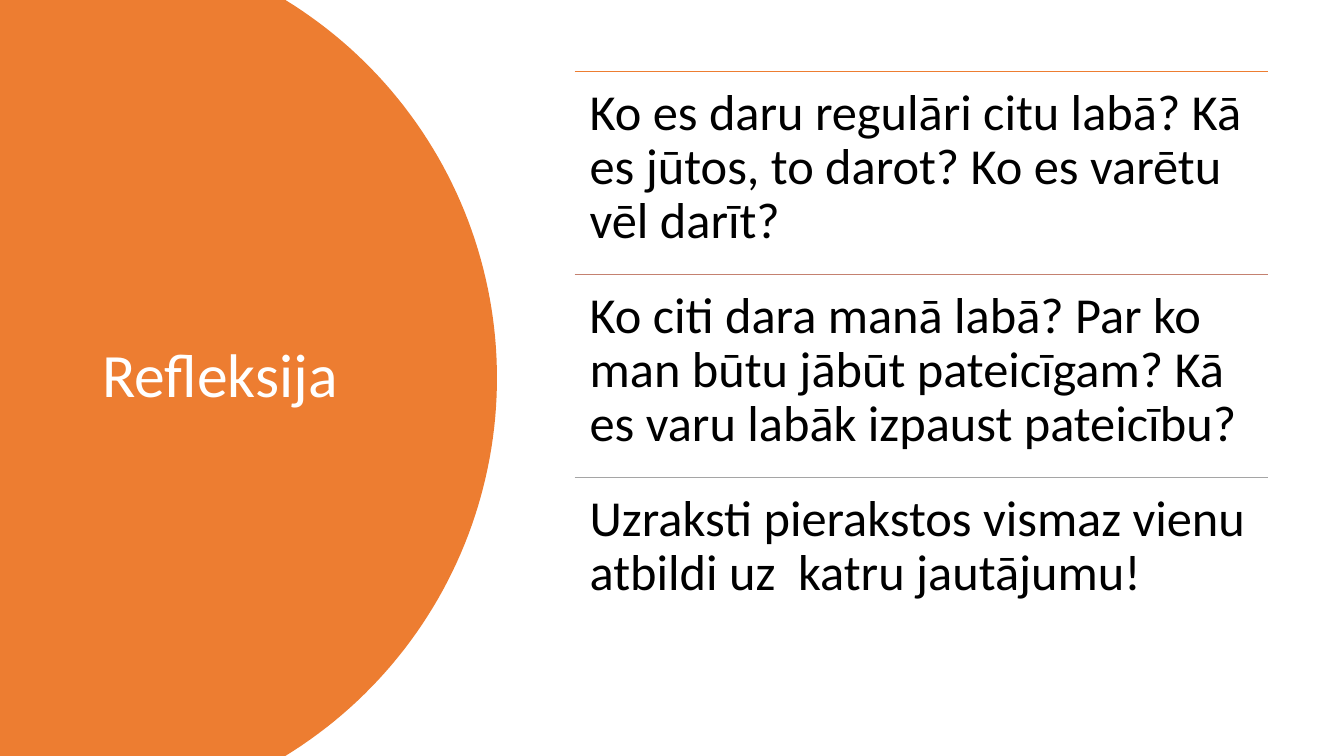
from math import asin, cos, sin

from lxml.etree import SubElement
from pptx import Presentation
from pptx.dml.color import RGBColor
from pptx.enum.shapes import MSO_CONNECTOR
from pptx.enum.text import MSO_ANCHOR
from pptx.oxml.ns import qn
from pptx.util import Pt

HUES = {
    "orange": "ED7D31",
    "clay": "C48170",
    "gray": "A5A5A5",
    "white": "FFFFFF",
    "black": "000000",
}
WIDE, HIGH = 960, 540


class Deck:
    font = "Calibri"

    def __init__(self):
        self.prs = Presentation()
        self.prs.slide_width, self.prs.slide_height = Pt(WIDE), Pt(HIGH)
        self.slide = self.prs.slides.add_slide(self.prs.slide_layouts[6])

    def color(self, name):
        return RGBColor.from_string(HUES[name])

    def shape(self, dots, hue):
        first, *rest = [(Pt(x), Pt(y)) for x, y in dots]
        form = self.slide.shapes.build_freeform(*first)
        form.add_line_segments(rest, close=True)
        item = form.convert_to_shape()
        item.shadow.inherit = False
        item.fill.solid()
        item.fill.fore_color.rgb = self.color(hue)
        item.line.fill.background()

    def rule(self, x, y, width, hue):
        line = self.slide.shapes.add_connector(
            MSO_CONNECTOR.STRAIGHT, Pt(x), Pt(y), Pt(x + width), Pt(y))
        line.line.color.rgb = self.color(hue)
        line.line.width = Pt(1)
        SubElement(line._element.spPr, qn("a:effectLst"))

    def text(self, words, x, y, width, height, size, hue, pad, anchor):
        box = self.slide.shapes.add_textbox(Pt(x), Pt(y), Pt(width), Pt(height))
        frame = box.text_frame
        frame.word_wrap = True
        frame.vertical_anchor = anchor
        frame.margin_left = frame.margin_right = Pt(pad[0])
        frame.margin_top = frame.margin_bottom = Pt(pad[1])
        para = frame.paragraphs[0]
        para.text = words
        para.line_spacing = 0.9
        para.font.name = self.font
        para.font.size = Pt(size)
        para.font.color.rgb = self.color(hue)


def main():
    deck = Deck()

    # Orange panel with a round right edge
    mid, edge, radius, steps = HIGH / 2, 355, 316.7, 90
    reach = asin(mid / radius)
    turns = [reach * (2 * i / steps - 1) for i in range(steps + 1)]
    arc = [(edge - radius + radius * cos(t), mid + radius * sin(t)) for t in turns]
    deck.shape([(0, 0), *arc, (0, HIGH)], "orange")

    # Title
    deck.text("Refleksija", 66, 50.4, 232.6, 438.5, 44, "white",
              (7.2, 3.6), MSO_ANCHOR.MIDDLE)

    # Questions, each under its own rule
    left, top, width, step = 410.4, 51, 495.4, 145
    rows = [
        ("orange", "Ko es daru regulāri citu labā? Kā es jūtos, to darot? "
                   "Ko es varētu vēl darīt?"),
        ("clay", "Ko citi dara manā labā? Par ko man būtu jābūt pateicīgam? "
                 "Kā es varu labāk izpaust pateicību?"),
        ("gray", "Uzraksti pierakstos vismaz vienu atbildi uz  katru jautājumu!"),
    ]
    for i, (hue, words) in enumerate(rows):
        y = top + i * step
        deck.rule(left, y, width, hue)
        deck.text(words, left, y, width, step, 36, "black",
                  (10.8, 10.8), MSO_ANCHOR.TOP)

    deck.prs.save("out.pptx")


if __name__ == "__main__":
    main()
